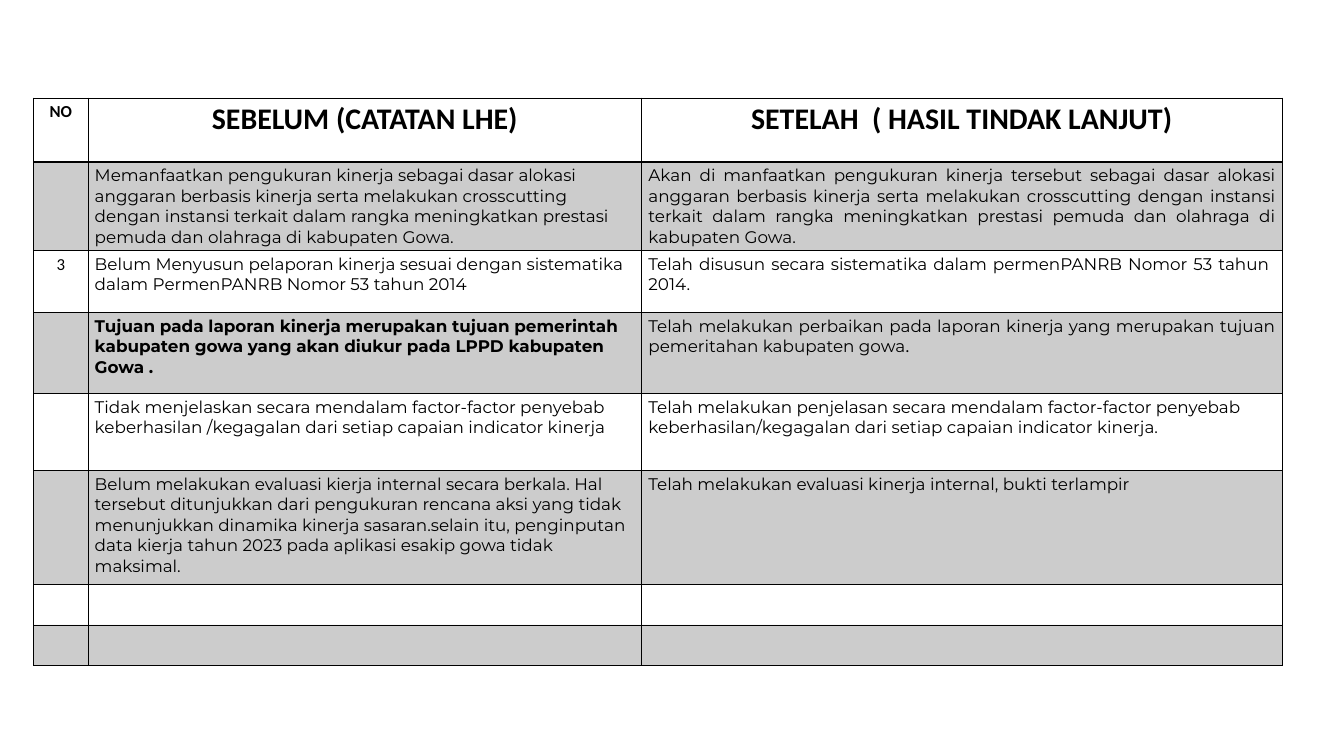
import dataclasses

import lxml.etree
import pptx
import pptx.dml.color
import pptx.enum.text
import pptx.oxml.ns
import pptx.util

Inches = pptx.util.Inches
Pt = pptx.util.Pt
Align = pptx.enum.text.PP_ALIGN
qn = pptx.oxml.ns.qn


@dataclasses.dataclass(frozen=True)
class Theme:
    ink: str = "000000"
    shade: int = 20  # percent of ink in banded rows
    head: str = "Calibri"
    body: str = "Montserrat"
    title: int = 32
    text: int = 18
    thin: int = 1
    thick: int = 2


@dataclasses.dataclass
class Cell:
    text: str = ""
    align: Align = Align.LEFT
    bold: bool = False
    font: str = Theme.body
    size: int = Theme.text
    tail: str = ""  # closing text in the heading font


class Deck:
    def __init__(self, theme, width, height):
        self.theme = theme
        self.prs = pptx.Presentation()
        self.prs.slide_width = Inches(width)
        self.prs.slide_height = Inches(height)
        self.slide = self.prs.slides.add_slide(self.prs.slide_layouts[6])

    def table(self, left, top, widths, heights, rows):
        frame = self.slide.shapes.add_table(
            len(heights), len(widths), Inches(left), Inches(top),
            Inches(sum(widths)), Inches(sum(heights)))
        grid = frame.table
        for col, width in zip(grid.columns, widths):
            col.width = Inches(width)
        for row, height in zip(grid.rows, heights):
            row.height = Inches(height)
        for r, items in enumerate(rows):
            for c, item in enumerate(items):
                cell = grid.cell(r, c)
                self.border(cell, self.theme.thick if r == 0 else self.theme.thin)
                self.fill(cell, r % 2 == 1)
                self.label(cell, item)

    def border(self, cell, base):
        """Rule all four sides, with the bottom one at its own weight."""
        props = cell._tc.get_or_add_tcPr()
        thin = self.theme.thin
        for side, weight in zip("LRTB", (thin, thin, thin, base)):
            line = lxml.etree.SubElement(props, qn("a:ln" + side), w=str(Pt(weight)))
            paint = lxml.etree.SubElement(line, qn("a:solidFill"))
            lxml.etree.SubElement(paint, qn("a:srgbClr"), val=self.theme.ink)

    def fill(self, cell, band):
        if not band:
            cell.fill.background()
            return
        cell.fill.solid()
        cell.fill.fore_color.rgb = self.color()
        tone = cell._tc.tcPr.find(qn("a:solidFill"))[0]
        lxml.etree.SubElement(tone, qn("a:alpha"), val=str(self.theme.shade * 1000))

    def label(self, cell, item):
        para = cell.text_frame.paragraphs[0]
        para.alignment = item.align
        font = para.font
        font.size = Pt(item.size)
        font.bold = item.bold
        font.name = item.font
        font.color.rgb = self.color()
        if item.text:
            para.add_run().text = item.text
        if item.tail:
            run = para.add_run()
            run.text = item.tail
            run.font.name = self.theme.head

    def color(self):
        return pptx.dml.color.RGBColor.from_string(self.theme.ink)


def head(text, size=Theme.title):
    return Cell(text, Align.CENTER, True, Theme.head, size)


def main():
    just = Align.JUSTIFY
    rows = [
        [head("NO", Theme.text), head("SEBELUM (CATATAN LHE)"),
         head("SETELAH  ( HASIL TINDAK LANJUT)")],
        [Cell(),
         Cell("Memanfaatkan pengukuran kinerja sebagai dasar alokasi anggaran "
              "berbasis kinerja serta melakukan crosscutting dengan instansi "
              "terkait dalam rangka meningkatkan prestasi pemuda dan olahraga "
              "di kabupaten Gowa."),
         Cell("Akan di manfaatkan pengukuran kinerja tersebut sebagai dasar "
              "alokasi anggaran berbasis kinerja serta melakukan crosscutting "
              "dengan instansi terkait dalam rangka meningkatkan prestasi "
              "pemuda dan olahraga di kabupaten Gowa.", just)],
        [Cell("3", Align.CENTER, font=Theme.head),
         Cell("Belum Menyusun pelaporan kinerja sesuai dengan sistematika "
              "dalam PermenPANRB Nomor 53 tahun 2014"),
         Cell("Telah disusun secara sistematika dalam permenPANRB Nomor 53 "
              "tahun  2014.", just)],
        [Cell(),
         Cell("Tujuan pada laporan kinerja merupakan tujuan pemerintah "
              "kabupaten gowa yang akan diukur pada LPPD kabupaten Gowa .",
              bold=True),
         Cell("Telah melakukan perbaikan pada laporan kinerja yang merupakan "
              "tujuan pemeritahan kabupaten gowa", just, tail=".")],
        [Cell(),
         Cell("Tidak menjelaskan secara mendalam factor-factor penyebab "
              "keberhasilan /kegagalan dari setiap capaian indicator kinerja"),
         Cell("Telah melakukan penjelasan secara mendalam factor-factor "
              "penyebab keberhasilan/kegagalan dari setiap capaian indicator "
              "kinerja.")],
        [Cell(),
         Cell("Belum melakukan evaluasi kierja internal secara berkala. Hal "
              "tersebut ditunjukkan dari pengukuran rencana aksi yang tidak "
              "menunjukkan dinamika kinerja sasaran.selain itu, penginputan "
              "data kierja tahun 2023 pada aplikasi esakip gowa tidak maksimal."),
         Cell("Telah melakukan evaluasi kinerja internal, bukti terlampir")],
        [Cell()] * 3,
        [Cell()] * 3,
    ]
    deck = Deck(Theme(), 20, 11.25)
    deck.table(0.5, 1.46, (0.81, 8.24, 9.53),
               (0.95, 1.3, 0.92, 1.21, 1.14, 1.7, 0.6, 0.6), rows)
    deck.prs.save("out.pptx")


if __name__ == "__main__":
    main()
